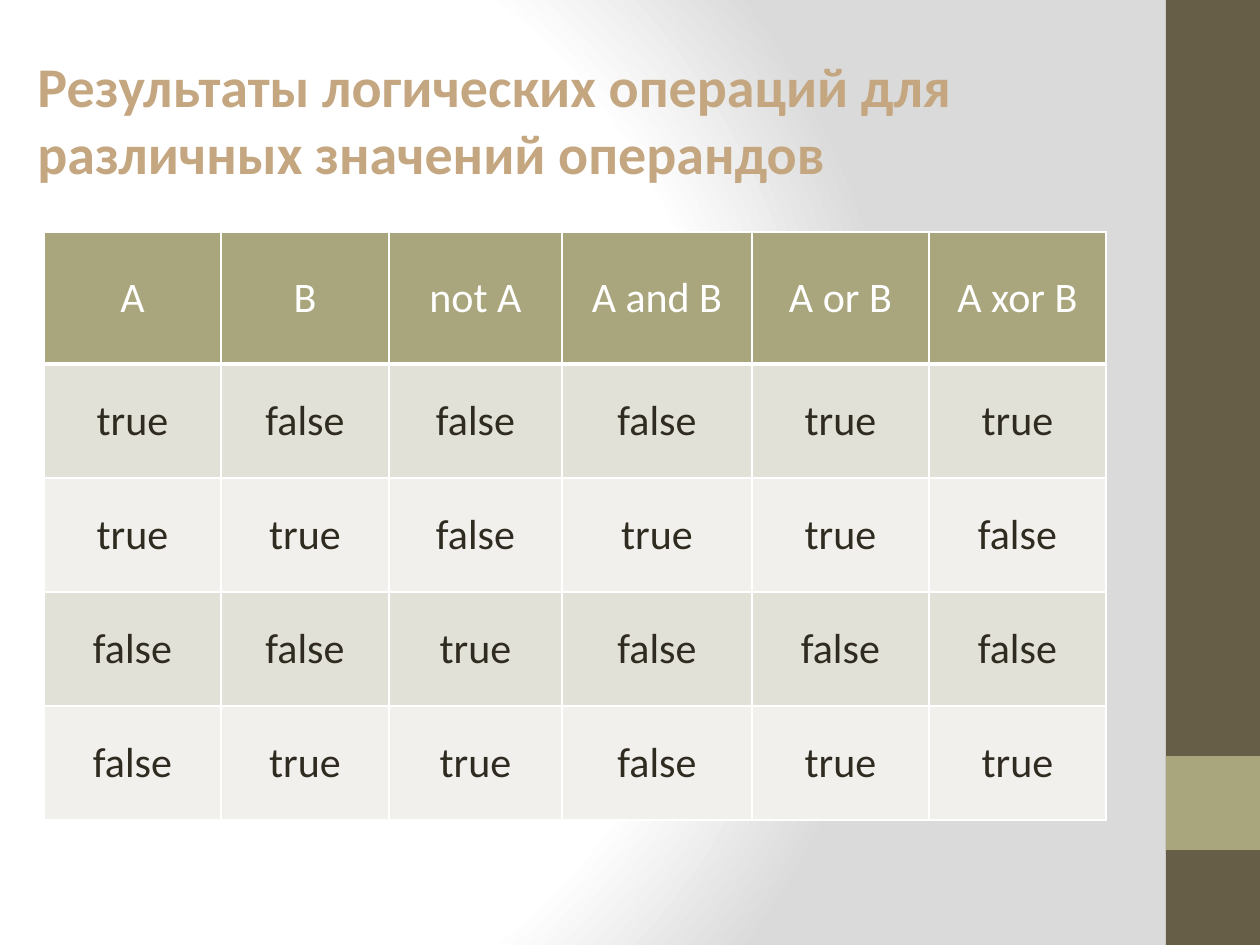
import dataclasses

import lxml.etree
import pptx
import pptx.dml.color
import pptx.enum.shapes
import pptx.enum.text
import pptx.oxml
import pptx.oxml.ns
import pptx.util

SCALE = 914400 / 126


@dataclasses.dataclass(frozen=True)
class Theme:
    font: str = "Calibri"
    title_size: int = 32
    cell_size: int = 24
    title: str = "C4A780"
    white: str = "FFFFFF"
    shade: str = "DADADA"
    dark: str = "675E47"
    accent: str = "A9A57C"
    text: str = "2F2B20"
    bands: tuple = ("E2E1D7", "F1F0EC")


THEME = Theme()
TITLE = "Результаты логических операций для различных значений операндов"
HEADER = ["A", "B", "not A", "A and B", "A or B", "A xor B"]
RESULTS = [
    "true false false false true true",
    "true true false true true false",
    "false false true false false false",
    "false true true false true true",
]
COLUMN_WIDTHS = [177, 168, 173, 190, 177, 177]
HEADER_HEIGHT, ROW_HEIGHT = 132, 114


def px(n):
    return pptx.util.Emu(round(n * SCALE))


def rgb(color):
    return pptx.dml.color.RGBColor.from_string(color)


def set_background(s):
    s.background.fill.solid()
    solid = s.element.find(".//" + pptx.oxml.ns.qn("p:bgPr"))[0]
    stops = [(0, THEME.white), (75, THEME.white), (100, THEME.shade)]
    gs = "".join(
        f'<a:gs pos="{pos * 1000}"><a:srgbClr val="{color}"/></a:gs>'
        for pos, color in stops
    )
    gradient = pptx.oxml.parse_xml(
        f'<a:gradFill {pptx.oxml.ns.nsdecls("a")} rotWithShape="1">'
        f'<a:gsLst>{gs}</a:gsLst><a:path path="circle">'
        '<a:fillToRect l="20000" t="50000" r="100000" b="50000"/>'
        '</a:path></a:gradFill>'
    )
    solid.getparent().replace(solid, gradient)


def add_block(s, x, y, w, h, color):
    sp = s.shapes.add_shape(
        pptx.enum.shapes.MSO_SHAPE.RECTANGLE, px(x), px(y), px(w), px(h)
    )
    sp.shadow.inherit = False
    sp.fill.solid()
    sp.fill.fore_color.rgb = rgb(color)
    sp.line.fill.background()


def style(p, size, color, bold=False):
    p.font.name = THEME.font
    p.font.size = pptx.util.Pt(size)
    p.font.color.rgb = rgb(color)
    p.font.bold = bold


def add_title(s, x, y, w, h):
    tf = s.shapes.add_textbox(px(x), px(y), px(w), px(h)).text_frame
    tf.word_wrap = True
    p = tf.paragraphs[0]
    p.text = TITLE
    style(p, THEME.title_size, THEME.title, bold=True)


def set_borders(cell, bottom):
    tc_pr = cell._tc.get_or_add_tcPr()
    for side, width in (("L", 1), ("R", 1), ("T", 1), ("B", bottom)):
        ln = lxml.etree.SubElement(
            tc_pr, pptx.oxml.ns.qn(f"a:ln{side}"), w=str(pptx.util.Pt(width))
        )
        fill = lxml.etree.SubElement(ln, pptx.oxml.ns.qn("a:solidFill"))
        lxml.etree.SubElement(
            fill, pptx.oxml.ns.qn("a:srgbClr"), val=THEME.white
        )


def fill_cell(cell, text, color, fill, bottom):
    set_borders(cell, bottom)
    cell.fill.solid()
    cell.fill.fore_color.rgb = rgb(fill)
    cell.vertical_anchor = pptx.enum.text.MSO_ANCHOR.MIDDLE
    p = cell.text_frame.paragraphs[0]
    p.text = text
    p.alignment = pptx.enum.text.PP_ALIGN.CENTER
    style(p, THEME.cell_size, color)


def add_truth_table(s, x, y):
    rows = [HEADER] + [line.split() for line in RESULTS]
    heights = [HEADER_HEIGHT] + [ROW_HEIGHT] * len(RESULTS)
    table = s.shapes.add_table(
        len(rows), len(HEADER), px(x), px(y),
        px(sum(COLUMN_WIDTHS)), px(sum(heights)),
    ).table
    table.first_row = False
    table.horz_banding = False
    for column, width in zip(table.columns, COLUMN_WIDTHS):
        column.width = px(width)
    for i, (values, height) in enumerate(zip(rows, heights)):
        table.rows[i].height = px(height)
        if i == 0:
            look = THEME.white, THEME.accent, 3
        else:
            look = THEME.text, THEME.bands[(i - 1) % 2], 1
        for j, value in enumerate(values):
            fill_cell(table.cell(i, j), value, *look)


def main():
    prs = pptx.Presentation()
    prs.slide_width, prs.slide_height = px(1260), px(945)
    s = prs.slides.add_slide(prs.slide_layouts[6])
    set_background(s)
    add_block(s, 1166, 0, 94, 945, THEME.dark)
    add_block(s, 1166, 756, 94, 94, THEME.accent)
    add_title(s, 25, 45, 1141, 187)
    add_truth_table(s, 44, 232)
    prs.save("out.pptx")


if __name__ == "__main__":
    main()
